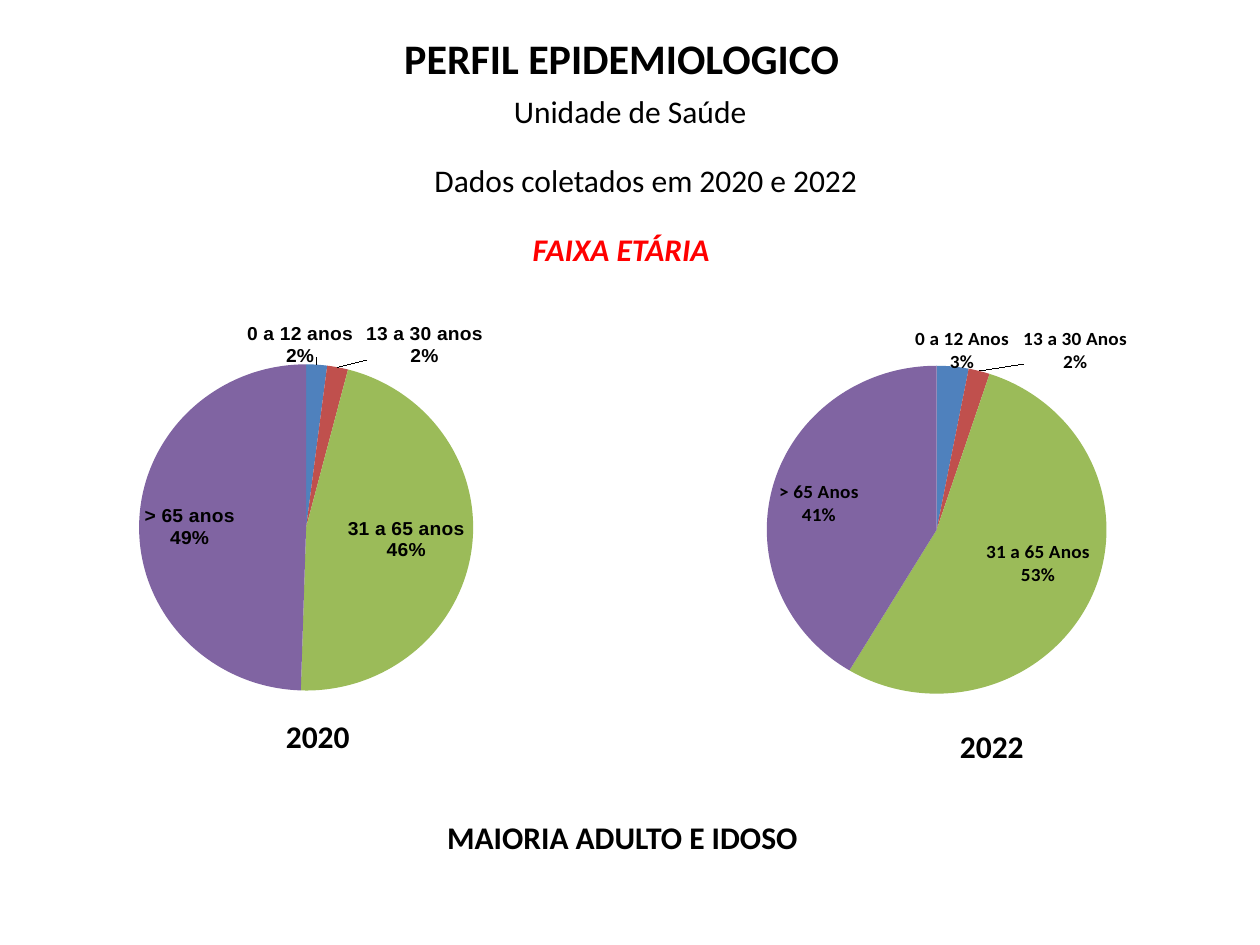
from copy import deepcopy

from lxml import etree
from pptx import Presentation
from pptx.chart.data import CategoryChartData
from pptx.dml.color import RGBColor
from pptx.enum.chart import XL_CHART_TYPE as ChartType, XL_LABEL_POSITION as LabelPos
from pptx.enum.text import MSO_AUTO_SIZE as AutoSize
from pptx.oxml import parse_xml
from pptx.oxml.ns import nsdecls, qn
from pptx.util import Inches, Pt

BLACK = RGBColor(0x00, 0x00, 0x00)
RED = RGBColor(0xFF, 0x00, 0x00)
SLICES = [RGBColor(0x4F, 0x81, 0xBD), RGBColor(0xC0, 0x50, 0x4D),
          RGBColor(0x9B, 0xBB, 0x59), RGBColor(0x80, 0x64, 0xA2)]
WIDTH, HEIGHT = Inches(10), Inches(7.5)

# Text, box (left, top, width, height in % of the slide), size, bold, italic, colour
TEXTS = [
    ("PERFIL EPIDEMIOLOGICO", (31.1, 2.8, 36.9, 6.67), 24, True, False, BLACK),
    ("Unidade de Saúde", (39.8, 9.07, 22.7, 5.33), 18, False, False, BLACK),
    ("Dados coletados em 2020 e 2022", (33.5, 16.4, 36, 5.33), 18, False, False, BLACK),
    ("FAIXA ETÁRIA", (41.3, 23.73, 16.3, 5.33), 18, True, True, RED),
    ("2020", (21.7, 75.2, 7.1, 5.33), 18, True, False, BLACK),
    ("2022", (75.2, 76.27, 7.1, 5.33), 18, True, False, BLACK),
    ("MAIORIA ADULTO E IDOSO", (34.5, 85.87, 30.1, 5.33), 18, True, False, BLACK),
]

# Label shifts are in % of the chart; plot boxes too
PIES = [
    dict(box=(-0.5, 33.2, 50, 40), plot=(3.2, 11.3, 92.8, 88.4), font="Arial",
         cats=["0 a 12 anos", "13 a 30 anos", "31 a 65 anos", "> 65 anos"],
         vals=[2, 2, 46, 49], shifts=[(-2.7, 0), (4.3, 0), (2.8, 0), (-5.2, 0)]),
    dict(box=(49.5, 33.2, 50.7, 42), plot=(3.7, 10, 90.6, 85.6), font="Calibri",
         cats=["0 a 12 Anos", "13 a 30 Anos", "31 a 65 Anos", "> 65 Anos"],
         vals=[3, 2, 53, 41], shifts=[(-6, 1), (6.6, 0), (3.8, 0), (-5.6, -1)]),
]


def place(box):
    """Turn slide percentages into lengths."""
    return [int(share * side / 100)
            for share, side in zip(box, (WIDTH, HEIGHT, WIDTH, HEIGHT))]


def layout(x, y, w=None, h=None):
    """Manual chart layout: a label shift, or an inner plot box when sized."""
    parts = [("x", x), ("y", y)]
    modes = ""
    if w is not None:
        parts += [("w", w), ("h", h)]
        modes = ('<c:layoutTarget val="inner"/><c:xMode val="edge"/>'
                 '<c:yMode val="edge"/>')
    tags = "".join(f'<c:{tag} val="{pct / 100:.3f}"/>' for tag, pct in parts)
    return parse_xml(f'<c:layout {nsdecls("c")}><c:manualLayout>{modes}{tags}'
                     '</c:manualLayout></c:layout>')


def set_font(font, name, size, bold=False, italic=False, color=BLACK):
    font.name, font.size = name, Pt(size)
    font.bold, font.italic = bold, italic
    font.color.rgb = color


def add_text(s, text, box, size, bold, italic, color):
    tf = s.shapes.add_textbox(*place(box)).text_frame
    tf.word_wrap = False
    tf.auto_size = AutoSize.SHAPE_TO_FIT_TEXT
    r = tf.paragraphs[0].add_run()
    r.text = text
    set_font(r.font, "Calibri", size, bold, italic, color)


def add_labels(plot, font, shifts):
    """Category and percentage on two lines, each label shifted on its own."""
    plot.has_data_labels = True
    labels = plot.data_labels
    set_font(labels.font, font, 11, bold=True)
    labels.show_category_name = True
    labels.show_value = True
    labels.number_format = '0"%"'
    labels.number_format_is_linked = False
    labels.position = LabelPos.CENTER
    group = labels._element
    separator = etree.Element(qn("c:separator"))
    separator.text = "\n"
    last = [el for el in group if el.tag != qn("c:showLeaderLines")][-1]
    last.addnext(separator)

    common = [el for el in group if el.tag != qn("c:showLeaderLines")]
    for i, shift in enumerate(shifts):
        label = etree.Element(qn("c:dLbl"))
        etree.SubElement(label, qn("c:idx")).set("val", str(i))
        label.append(layout(*shift))
        label.extend(deepcopy(common))
        if i < 2:  # the narrow slices are labelled outside
            label.find(qn("c:dLblPos")).set("val", "outEnd")
        group.insert(i, label)
    # Labels belong to the series, in front of its categories
    plot.series[0]._element.find(qn("c:cat")).addprevious(group)


def add_pie(s, box, plot, font, cats, vals, shifts):
    data = CategoryChartData()
    data.categories = cats
    data.add_series("Series 1", vals)
    chart = s.shapes.add_chart(ChartType.PIE, *place(box), data).chart
    chart.has_title = False
    chart.has_legend = False
    set_font(chart.font, "Calibri", 10)

    area = chart._chartSpace.find(".//" + qn("c:plotArea"))
    for old in area.findall(qn("c:layout")):
        area.remove(old)
    area.insert(0, layout(*plot))

    pie = chart.plots[0]
    pie.vary_by_categories = True
    for i, color in enumerate(SLICES):
        fill = pie.series[0].points[i].format.fill
        fill.solid()
        fill.fore_color.rgb = color
    add_labels(pie, font, shifts)


def main():
    prs = Presentation()
    prs.slide_width, prs.slide_height = WIDTH, HEIGHT
    s = prs.slides.add_slide(prs.slide_layouts[6])

    # Headings, years and conclusion
    for text in TEXTS:
        add_text(s, *text)

    # Age groups by year
    for pie in PIES:
        add_pie(s, **pie)

    prs.save("out.pptx")


if __name__ == "__main__":
    main()
